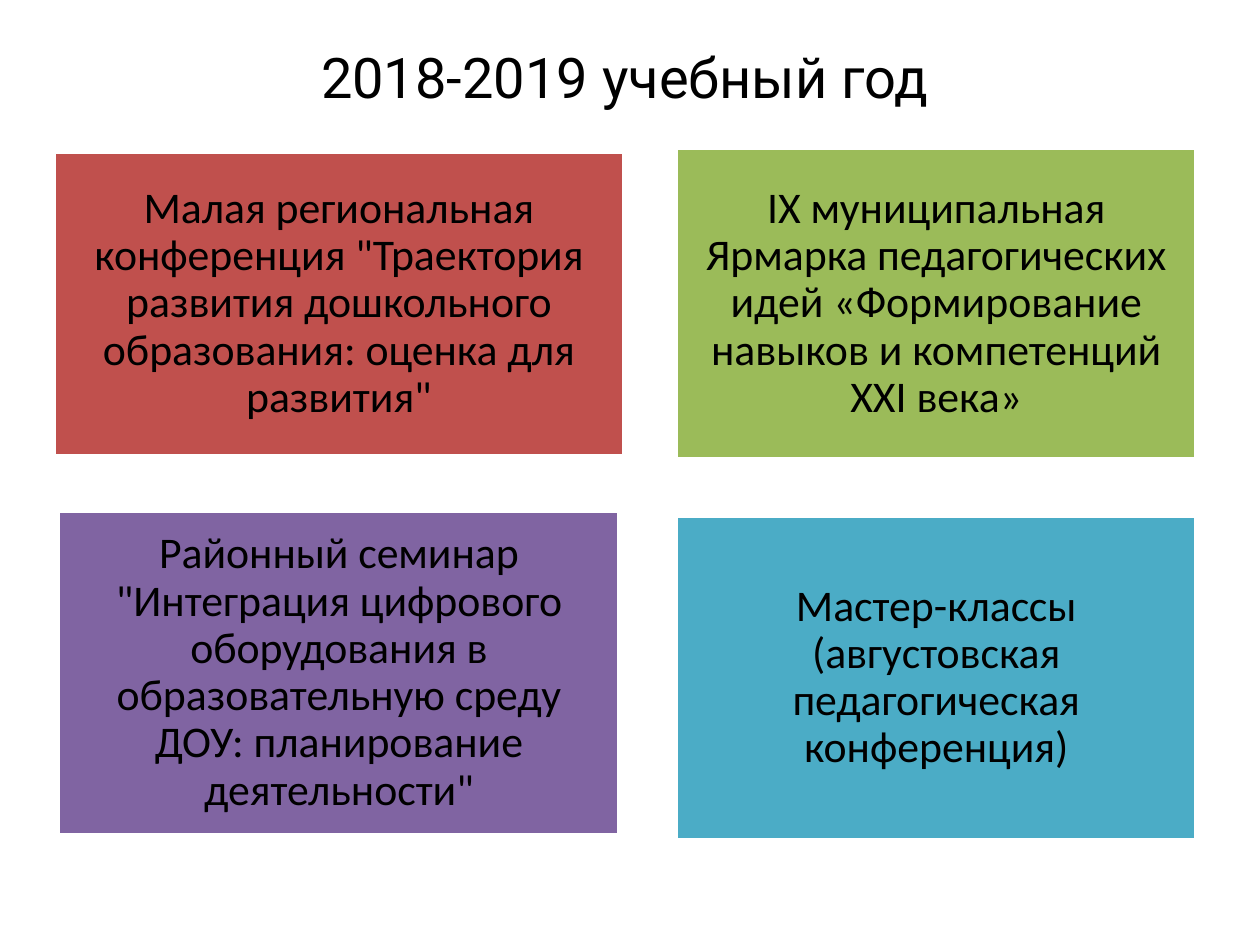
"""Build a slide with four coloured cards of events for the 2018-2019 school year."""
from pptx import Presentation
from pptx.dml.color import RGBColor
from pptx.enum.shapes import MSO_SHAPE as Shape
from pptx.enum.text import MSO_ANCHOR as Anchor, MSO_AUTO_SIZE as AutoSize, PP_ALIGN as Align
from pptx.util import Inches, Pt

COLORS = {
    "red": "C0504D",
    "green": "9BBB59",
    "purple": "8064A2",
    "blue": "4BACC6",
    "border": "FFFFFF",
    "text": "000000",
}
COLUMN_CENTERS = (2.69, 7.43)
ROW_CENTERS = (2.41, 5.36)
CARDS = [
    (0, 0, 4.52, 2.41, 0, "red",
     'Малая региональная конференция "Траектория развития дошкольного образования: оценка для развития"'),
    (1, 0, 4.12, 2.47, 0, "green",
     "IX муниципальная Ярмарка педагогических идей «Формирование навыков и компетенций XXI века»"),
    (0, 1, 4.45, 2.57, -0.02, "purple",
     'Районный семинар "Интеграция цифрового оборудования в образовательную среду ДОУ: планирование деятельности"'),
    (1, 1, 4.12, 2.57, 0.02, "blue",
     "Мастер-классы (августовская педагогическая конференция)"),
]


def color(name):
    return RGBColor.from_string(COLORS[name])


def write(shape, text, font_name, size):
    text_frame = shape.text_frame
    text_frame.word_wrap = True
    text_frame.text = text
    paragraph = text_frame.paragraphs[0]
    paragraph.alignment = Align.CENTER
    font = paragraph.runs[0].font
    font.name = font_name
    font.size = Pt(size)
    font.color.rgb = color("text")
    return text_frame


presentation = Presentation()
presentation.slide_width = Inches(10)
presentation.slide_height = Inches(7.5)
slide = presentation.slides.add_slide(presentation.slide_layouts[6])

for column, row, width, height, shift, fill, text in CARDS:
    left = COLUMN_CENTERS[column] - width / 2
    top = ROW_CENTERS[row] - height / 2 + shift
    card = slide.shapes.add_shape(
        Shape.RECTANGLE, Inches(left), Inches(top), Inches(width), Inches(height))
    card.shadow.inherit = False
    card.fill.solid()
    card.fill.fore_color.rgb = color(fill)
    card.line.color.rgb = color("border")
    card.line.width = Pt(2)
    text_frame = write(card, text, "Calibri", 25)
    text_frame.vertical_anchor = Anchor.MIDDLE
    text_frame.margin_left = text_frame.margin_right = Inches(0.1)
    text_frame.margin_top = text_frame.margin_bottom = Inches(0.1)
    text_frame.paragraphs[0].line_spacing = 0.9

title = slide.shapes.add_textbox(Inches(0.43), Inches(0.29), Inches(9.06), Inches(0.64))
write(title, "2018-2019 учебный год", "Roboto", 32).auto_size = AutoSize.SHAPE_TO_FIT_TEXT

presentation.save("out.pptx")
